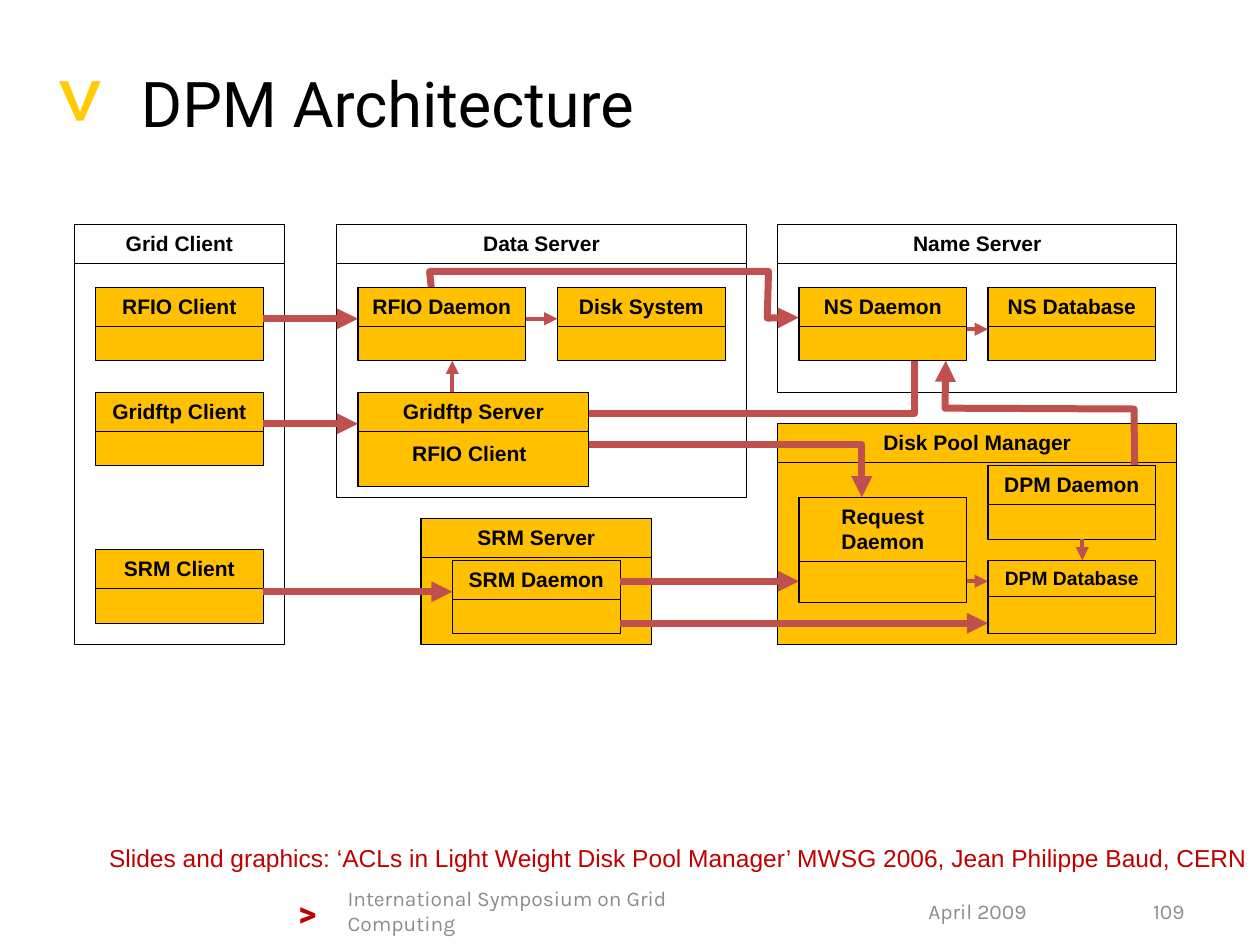
from lxml import etree
from pptx import Presentation
from pptx.dml.color import RGBColor
from pptx.enum.shapes import MSO_CONNECTOR, MSO_SHAPE
from pptx.enum.text import MSO_ANCHOR, PP_ALIGN
from pptx.oxml.ns import qn
from pptx.util import Inches, Pt

RECTANGLE = MSO_SHAPE.RECTANGLE
STRAIGHT = MSO_CONNECTOR.STRAIGHT
TOP, MIDDLE = MSO_ANCHOR.TOP, MSO_ANCHOR.MIDDLE
LEFT, CENTER, RIGHT = PP_ALIGN.LEFT, PP_ALIGN.CENTER, PP_ALIGN.RIGHT

BLACK, AMBER, YELLOW = "000000", "FFC000", "FFCC00"
RED, ARROW_RED, GRAY = "C00000", "C0504D", "8C8C8C"

# The diagram stands on a grid of sixths of an inch.
GRID_LEFT, GRID_TOP, CELL = 0.59, 1.78, 1 / 6
HEADER = 1.86
BOX_WIDTH, BOX_HEIGHT = 8, 3.5

# name, column, row, columns, rows, fill
PANELS = [
    ("Grid Client", 0, 0, 10, 20, None),
    ("Data Server", 12.5, 0, 19.5, 13, None),
    ("SRM Server", 16.5, 14, 11, 6, AMBER),
    ("Name Server", 33.5, 0, 19, 8, None),
    ("Disk Pool Manager", 33.5, 9.5, 19, 10.5, AMBER),
]
# name, column, row
COMPONENTS = [
    ("RFIO Client", 1, 3),
    ("Gridftp Client", 1, 8),
    ("SRM Client", 1, 15.5),
    ("RFIO Daemon", 13.5, 3),
    ("Disk System", 23, 3),
    ("SRM Daemon", 18, 16),
    ("NS Daemon", 34.5, 3),
    ("NS Database", 43.5, 3),
    ("DPM Daemon", 43.5, 11.5),
]
THIN, THICK = 2.5, 4
# start, end, weight
ARROWS = [
    ((9, 4.5), (13.5, 4.5), THICK),
    ((9, 9.5), (13.5, 9.5), THICK),
    ((9, 17.5), (18, 17.5), THICK),
    ((26, 17), (34.5, 17), THICK),
    ((26, 19), (43.5, 19), THICK),
    ((21.5, 4.5), (23, 4.5), THIN),
    ((18, 8), (18, 6.5), THIN),
    ((42.5, 5), (43.5, 5), THIN),
    ((42.5, 17), (43.5, 17), THIN),
    ((48, 15), (48, 16), THIN),
]
ROUTES = [
    [(24.5, 9), (40, 9), (40, 5.5)],
    [(24.5, 10.5), (37.5, 10.5), (37.5, 13)],
    [(50.5, 12.5), (50.46, 8.8), (41.46, 8.76), (41.5, 6.5)],
    [(17, 3), (16.92, 2.25), (33.06, 2.25), (33, 4.47), (34.5, 4.44)],
]


def color(value):
    return RGBColor.from_string(value)


def grid_point(column, row):
    return Inches(GRID_LEFT + column * CELL), Inches(GRID_TOP + row * CELL)


def write(shape, text, font, size, ink, align=LEFT, anchor=TOP, bold=False, wrap=True):
    frame = shape.text_frame
    frame.word_wrap = wrap
    frame.vertical_anchor = anchor
    para = frame.paragraphs[0]
    para.text = text
    para.alignment = align
    para.font.name, para.font.size, para.font.bold = font, Pt(size), bold
    para.font.color.rgb = color(ink)


def add_text(page, box, text, font, size, ink, **style):
    shape = page.shapes.add_textbox(*map(Inches, box))
    write(shape, text, font, size, ink, **style)
    return shape


def add_rectangle(page, column, row, columns, rows, fill, outlined=True):
    shape = page.shapes.add_shape(RECTANGLE, *grid_point(column, row),
                                  Inches(columns * CELL), Inches(rows * CELL))
    shape.shadow.inherit = False
    if fill:
        shape.fill.solid()
        shape.fill.fore_color.rgb = color(fill)
    else:
        shape.fill.background()
    if outlined:
        shape.line.color.rgb = color(BLACK)
        shape.line.width = Pt(0.75)
    else:
        shape.line.fill.background()
    return shape


def add_component(page, name, column, row, columns=BOX_WIDTH, rows=BOX_HEIGHT,
                  fill=AMBER, header=HEADER, size=12):
    """Draw a box with its name in a header strip."""
    add_rectangle(page, column, row, columns, rows, fill)
    strip = add_rectangle(page, column, row, columns, header, fill)
    write(strip, name, "Arial", size, BLACK, align=CENTER, bold=True)


def style_arrow(shape, weight):
    shape.line.color.rgb = color(ARROW_RED)
    shape.line.width = Pt(weight)
    line = shape.line._get_or_add_ln()
    etree.SubElement(line, qn("a:tailEnd"), type="triangle")


def add_arrow(page, start, end, weight):
    arrow = page.shapes.add_connector(STRAIGHT, *grid_point(*start), *grid_point(*end))
    style_arrow(arrow, weight)
    etree.SubElement(arrow._element.spPr, qn("a:effectLst"))


def add_route(page, corners):
    start, *rest = [grid_point(*corner) for corner in corners]
    builder = page.shapes.build_freeform(*start)
    builder.add_line_segments(rest, close=False)
    route = builder.convert_to_shape()
    route.fill.background()
    style_arrow(route, THICK)
    route.shadow.inherit = False


def add_diagram(page):
    for name, *cells, fill in PANELS:
        add_component(page, name, *cells, fill=fill)
    for corners in ROUTES:
        add_route(page, corners)
    for name, column, row in COMPONENTS:
        add_component(page, name, column, row)
    add_component(page, "Gridftp Server", 13.5, 8, columns=11, rows=4.5)
    add_component(page, "Request Daemon", 34.5, 13, rows=5, header=3.05)
    add_component(page, "DPM Database", 43.5, 16, header=1.74, size=11)
    embedded = add_rectangle(page, 15.5, 10, 6.66, 1.8, AMBER, outlined=False)
    write(embedded, "RFIO Client", "Arial", 12, BLACK, bold=True, wrap=False)
    for start, end, weight in ARROWS:
        add_arrow(page, start, end, weight)


def add_title(page):
    marker = add_text(page, (0.46, 0.23, 0.47, 1.01), ">", "Roboto", 54, YELLOW)
    marker.rotation = 90
    add_text(page, (1.02, 0.38, 8.48, 0.87), "DPM Architecture", "Roboto", 36, BLACK,
             anchor=MIDDLE)


def add_footer(page):
    add_text(page, (0.55, 6.64, 9.45, 0.34),
             "Slides and graphics: ‘ACLs in Light Weight Disk Pool Manager’ "
             "MWSG 2006, Jean Philippe Baud, CERN", "Arial", 14, RED, align=RIGHT)
    add_text(page, (2.27, 7.03, 0.47, 0.44), ">", "Roboto", 20, RED, bold=True)
    for text, left, width, align in [
        ("International Symposium on Grid Computing", 2.66, 3.59, LEFT),
        ("April 2009", 7.27, 1.17, LEFT),
        ("109", 8.98, 0.52, RIGHT),
    ]:
        add_text(page, (left, 7.11, width, 0.24), text, "Karla", 12, GRAY,
                 align=align, anchor=MIDDLE)


def main():
    deck = Presentation()
    deck.slide_width, deck.slide_height = Inches(10), Inches(7.5)
    page = deck.slides.add_slide(deck.slide_layouts[6])
    add_title(page)
    add_diagram(page)
    add_footer(page)
    deck.save("out.pptx")


if __name__ == "__main__":
    main()
